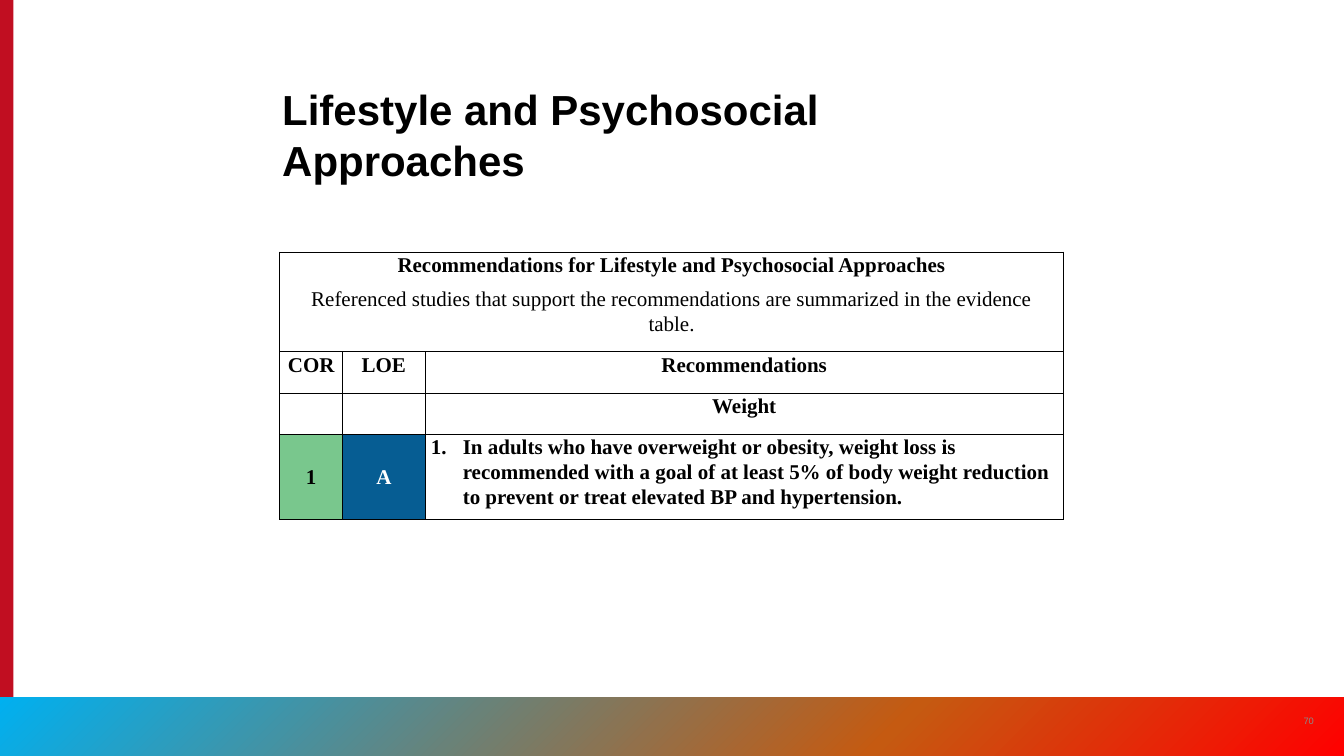
from lxml.etree import SubElement
from pptx import Presentation
from pptx.dml.color import RGBColor
from pptx.enum.shapes import MSO_SHAPE
from pptx.enum.text import MSO_ANCHOR, MSO_AUTO_SIZE, PP_ALIGN
from pptx.oxml.ns import qn
from pptx.util import Inches, Pt

SLIDE_W, SLIDE_H = Inches(16), Inches(9)
COLUMNS, ROWS = 16, 9
BLACK, WHITE, GREY = "000000", "FFFFFF", "8A8B8A"
RED, GREEN, BLUE = "C10E21", "79C78D", "065D93"
FOOTER_STOPS = [(0, "00B0F0"), (66, "C55A11"), (100, "FF0000")]
FOOTER_TOP = 8.3
TABLE_COLUMNS = [0.75, 0.98, 7.6]
TABLE_ROWS = [1.19, 0.49, 0.49, 1.01]
HEADING = [
    ("Recommendations for Lifestyle and Psychosocial Approaches", True),
    ("Referenced studies that support the recommendations are "
     "summarized in the evidence table.", False),
]
COLUMN_HEADS = ["COR", "LOE", "Recommendations"]
ADVICE = ("In adults who have overweight or obesity, weight loss is recommended "
          "with a goal of at least 5% of body weight reduction to prevent or "
          "treat elevated BP and hypertension.")


def across(columns):
    return round(SLIDE_W * columns / COLUMNS)


def down(rows):
    return round(SLIDE_H * rows / ROWS)


def box(left, top, width, height):
    return across(left), down(top), across(width), down(height)


def rgb(color):
    return RGBColor.from_string(color)


def add_run(paragraph, text, size, font, color=BLACK, bold=False):
    run = paragraph.add_run()
    run.text = text
    run.font.size, run.font.name, run.font.bold = Pt(size), font, bold
    run.font.color.rgb = rgb(color)


def add_band(slide, *place):
    band = slide.shapes.add_shape(MSO_SHAPE.RECTANGLE, *box(*place))
    band.shadow.inherit = False
    band.line.fill.background()
    return band


def fill_gradient(shape, stops, angle):
    """Fill with any number of (percent, colour) stops."""
    shape.fill.gradient()
    gradient = shape.element.spPr.find(qn("a:gradFill"))
    for child in list(gradient):
        gradient.remove(child)
    stop_list = SubElement(gradient, qn("a:gsLst"))
    for percent, color in stops:
        stop = SubElement(stop_list, qn("a:gs"), pos=str(percent * 1000))
        SubElement(stop, qn("a:srgbClr"), val=color)
    SubElement(gradient, qn("a:lin"), ang=str(angle * 60000), scaled="0")


def add_title(slide, text):
    title = slide.shapes.title
    title.left, title.top, title.width, title.height = box(3.26, 1.58, 9.48, 0.67)
    frame = title.text_frame
    frame.word_wrap = True
    frame.auto_size = MSO_AUTO_SIZE.NONE
    frame.vertical_anchor = MSO_ANCHOR.BOTTOM
    paragraph = frame.paragraphs[0]
    paragraph.alignment = PP_ALIGN.LEFT
    add_run(paragraph, text, 36, "Arial", bold=True)


def add_page_number(slide, number):
    frame = slide.shapes.add_textbox(*box(15.34, 8.34, 0.48, 0.48)).text_frame
    frame.word_wrap = True
    frame.vertical_anchor = MSO_ANCHOR.MIDDLE
    paragraph = frame.paragraphs[0]
    paragraph.alignment = PP_ALIGN.CENTER
    add_run(paragraph, number, 8, "Arial", GREY)


def style_cell(cell):
    cell.margin_left = cell.margin_right = across(0.07)
    cell.margin_top = cell.margin_bottom = 0
    properties = cell._tc.get_or_add_tcPr()
    for side in ("lnL", "lnR", "lnT", "lnB"):
        border = SubElement(properties, qn(f"a:{side}"), w=str(Pt(1)))
        color = SubElement(border, qn("a:solidFill"))
        SubElement(color, qn("a:srgbClr"), val=BLACK)
    cell.fill.background()


def write_cell(cell, lines, color=BLACK):
    """Write (text, bold) lines as centred paragraphs."""
    frame = cell.text_frame
    for index, (text, bold) in enumerate(lines):
        paragraph = frame.add_paragraph() if index else frame.paragraphs[0]
        paragraph.alignment = PP_ALIGN.CENTER
        paragraph.line_spacing, paragraph.space_after = 1.07, Pt(8)
        add_run(paragraph, text, 18, "Times New Roman", color, bold)


def write_grade(cell, grade, fill, color):
    write_cell(cell, [(grade, True)], color)
    cell.vertical_anchor = MSO_ANCHOR.MIDDLE
    cell.fill.solid()
    cell.fill.fore_color.rgb = rgb(fill)


def number_paragraph(paragraph, indent):
    paragraph.alignment = PP_ALIGN.LEFT
    properties = paragraph._p.get_or_add_pPr()
    properties.set("marL", str(indent))
    properties.set("indent", str(-indent))
    SubElement(properties, qn("a:buAutoNum"), type="arabicPeriod")


def add_recommendations(slide):
    place = box(3.33, 3, sum(TABLE_COLUMNS), sum(TABLE_ROWS))
    table = slide.shapes.add_table(
        len(TABLE_ROWS), len(TABLE_COLUMNS), *place).table
    table.first_row = table.horz_banding = False
    for column, width in zip(table.columns, TABLE_COLUMNS):
        column.width = across(width)
    for row, height in zip(table.rows, TABLE_ROWS):
        row.height = down(height)
    for cell in table.iter_cells():
        style_cell(cell)

    table.cell(0, 0).merge(table.cell(0, 2))
    write_cell(table.cell(0, 0), HEADING)
    for column, head in enumerate(COLUMN_HEADS):
        write_cell(table.cell(1, column), [(head, True)])
    write_cell(table.cell(2, 2), [("Weight", True)])
    write_grade(table.cell(3, 0), "1", GREEN, BLACK)
    write_grade(table.cell(3, 1), "A", BLUE, WHITE)
    advice = table.cell(3, 2)
    write_cell(advice, [(ADVICE, True)])
    number_paragraph(advice.text_frame.paragraphs[0], across(0.38))


def main():
    presentation = Presentation()
    presentation.slide_width, presentation.slide_height = SLIDE_W, SLIDE_H
    slide = presentation.slides.add_slide(presentation.slide_layouts[5])

    side_band = add_band(slide, 0, 0, 0.16, ROWS)
    side_band.fill.solid()
    side_band.fill.fore_color.rgb = rgb(RED)
    footer = add_band(slide, 0, FOOTER_TOP, COLUMNS, ROWS - FOOTER_TOP)
    fill_gradient(footer, FOOTER_STOPS, 45)

    add_title(slide, "Lifestyle and Psychosocial Approaches")
    add_recommendations(slide)
    add_page_number(slide, "70")
    presentation.save("out.pptx")


if __name__ == "__main__":
    main()
